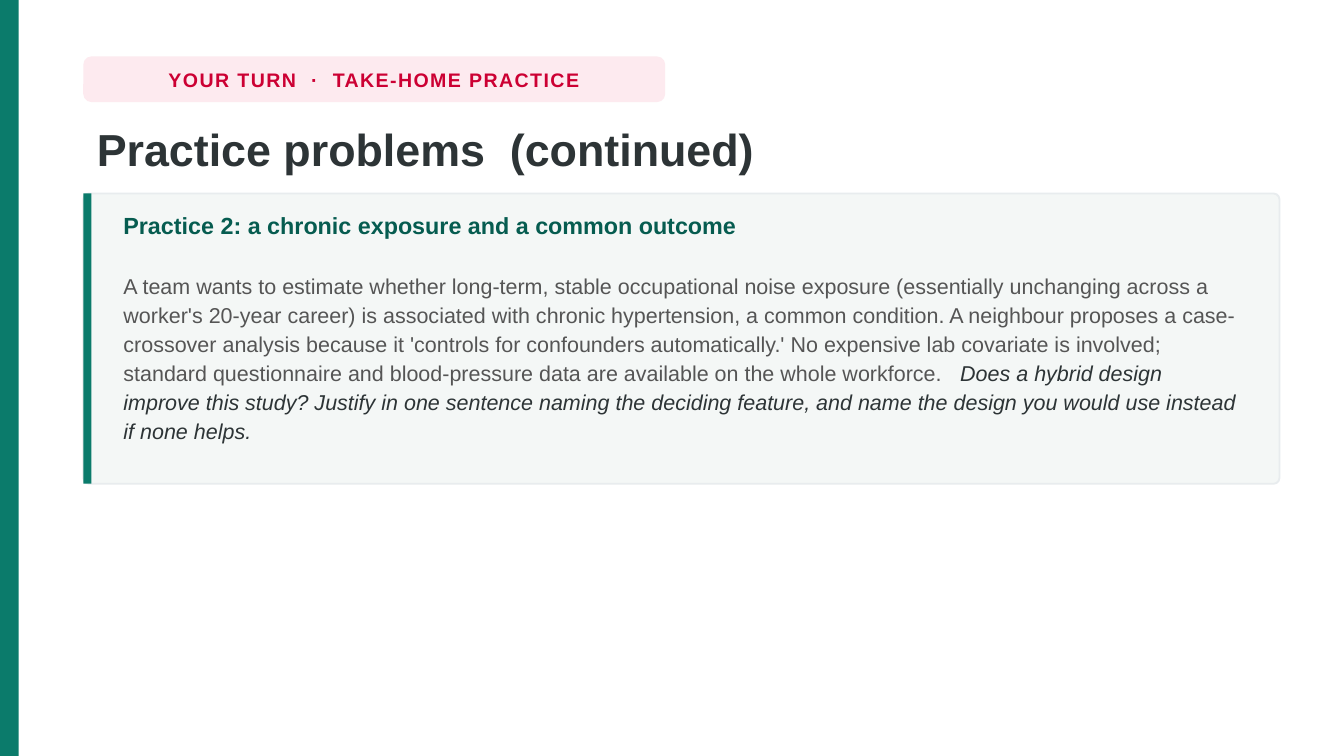
"""Build the slide with the second take-home practice problem."""
from dataclasses import dataclass

import pptx
import pptx.dml.color
import pptx.enum.shapes
import pptx.enum.text
import pptx.util

Inches = pptx.util.Inches
Shape = pptx.enum.shapes.MSO_SHAPE
Anchor = pptx.enum.text.MSO_ANCHOR
Align = pptx.enum.text.PP_ALIGN


@dataclass(frozen=True)
class Theme:
    font: str = "Arial"
    background: str = "FFFFFF"
    accent: str = "0B7B6B"
    heading: str = "065C50"
    ink: str = "2D3436"
    muted: str = "555555"
    tag_fill: str = "FDEAEF"
    tag_text: str = "CC0033"
    card_fill: str = "F4F7F6"
    card_line: str = "E8ECEE"
    title_size: float = 24
    heading_size: float = 12.5
    body_size: float = 11.5
    tag_size: float = 10.5


THEME = Theme()
WIDTH = 10
HEIGHT = WIDTH * 9 / 16
LEFT, CONTENT_WIDTH = 0.62, 8.9
CARD_TOP, CARD_HEIGHT = 1.44, 2.16

SCENARIO = (
    "A team wants to estimate whether long-term, stable occupational noise exposure "
    "(essentially unchanging across a worker's 20-year career) is associated with chronic "
    "hypertension, a common condition. A neighbour proposes a case-crossover analysis because "
    "it 'controls for confounders automatically.' No expensive lab covariate is involved; "
    "standard questionnaire and blood-pressure data are available on the whole workforce.   "
)
QUESTION = (
    "Does a hybrid design improve this study? Justify in one sentence naming the deciding "
    "feature, and name the design you would use instead if none helps."
)


def color(value):
    return pptx.dml.color.RGBColor.from_string(value)


def format_run(run, size, ink, bold=False, italic=False):
    font = run.font
    font.name = THEME.font
    font.size = pptx.util.Pt(size)
    font.color.rgb = color(ink)
    font.bold = bold
    font.italic = italic


def add_panel(slide, kind, left, top, width, height, fill, line=None, rounding=None):
    shape = slide.shapes.add_shape(
        kind, Inches(left), Inches(top), Inches(width), Inches(height)
    )
    shape.shadow.inherit = False
    shape.fill.solid()
    shape.fill.fore_color.rgb = color(fill)
    if line:
        shape.line.color.rgb = color(line)
        shape.line.width = pptx.util.Pt(1)
    else:
        shape.line.fill.background()
    if rounding is not None:
        shape.adjustments[0] = rounding
    return shape


def add_tag(slide, text):
    shape = add_panel(slide, Shape.ROUNDED_RECTANGLE, LEFT, 0.42, 4.33, 0.34,
                      THEME.tag_fill, rounding=0.18)
    text_frame = shape.text_frame
    text_frame.text = text
    text_frame.word_wrap = False
    text_frame.vertical_anchor = Anchor.MIDDLE
    paragraph = text_frame.paragraphs[0]
    paragraph.alignment = Align.CENTER
    run = paragraph.runs[0]
    format_run(run, THEME.tag_size, THEME.tag_text, bold=True)
    run.font._element.set("spc", "80")


def set_title(slide, text):
    title = slide.shapes.title
    title.left, title.top = Inches(LEFT), Inches(0.84)
    title.width, title.height = Inches(CONTENT_WIDTH), Inches(0.56)
    text_frame = title.text_frame
    text_frame.text = text
    text_frame.auto_size = pptx.enum.text.MSO_AUTO_SIZE.NONE
    text_frame.vertical_anchor = Anchor.TOP
    text_frame.margin_top = Inches(0.06)
    paragraph = text_frame.paragraphs[0]
    paragraph.alignment = Align.LEFT
    paragraph.line_spacing = 1.02
    format_run(paragraph.runs[0], THEME.title_size, THEME.ink, bold=True)


def add_problem(slide, heading, scenario, question):
    add_panel(slide, Shape.ROUNDED_RECTANGLE, LEFT, CARD_TOP, CONTENT_WIDTH, CARD_HEIGHT,
              THEME.card_fill, line=THEME.card_line, rounding=0.02)
    add_panel(slide, Shape.RECTANGLE, LEFT, CARD_TOP, 0.06, CARD_HEIGHT, THEME.accent)
    box = slide.shapes.add_textbox(
        Inches(LEFT + 0.2), Inches(CARD_TOP + 0.08), Inches(8.48), Inches(CARD_HEIGHT - 0.16)
    )
    text_frame = box.text_frame
    text_frame.word_wrap = True
    text_frame.margin_top = Inches(0.03)
    text_frame.text = heading
    heading_paragraph = text_frame.paragraphs[0]
    heading_paragraph.space_after = pptx.util.Pt(16.5)
    format_run(heading_paragraph.runs[0], THEME.heading_size, THEME.heading, bold=True)
    body_paragraph = text_frame.add_paragraph()
    body_paragraph.text = scenario
    format_run(body_paragraph.runs[0], THEME.body_size, THEME.muted)
    question_run = body_paragraph.add_run()
    question_run.text = question
    format_run(question_run, THEME.body_size, THEME.ink, italic=True)
    for paragraph in text_frame.paragraphs:
        paragraph.line_spacing = 1.12


def main():
    presentation = pptx.Presentation()
    presentation.slide_width = Inches(WIDTH)
    presentation.slide_height = Inches(HEIGHT)
    slide = presentation.slides.add_slide(presentation.slide_layouts.get_by_name("Title Only"))
    slide.background.fill.solid()
    slide.background.fill.fore_color.rgb = color(THEME.background)
    add_panel(slide, Shape.RECTANGLE, 0, 0, 0.14, HEIGHT, THEME.accent)
    add_tag(slide, "YOUR TURN  ·  TAKE-HOME PRACTICE")
    set_title(slide, "Practice problems  (continued)")
    add_problem(slide, "Practice 2: a chronic exposure and a common outcome", SCENARIO, QUESTION)
    presentation.save("out.pptx")


if __name__ == "__main__":
    main()
